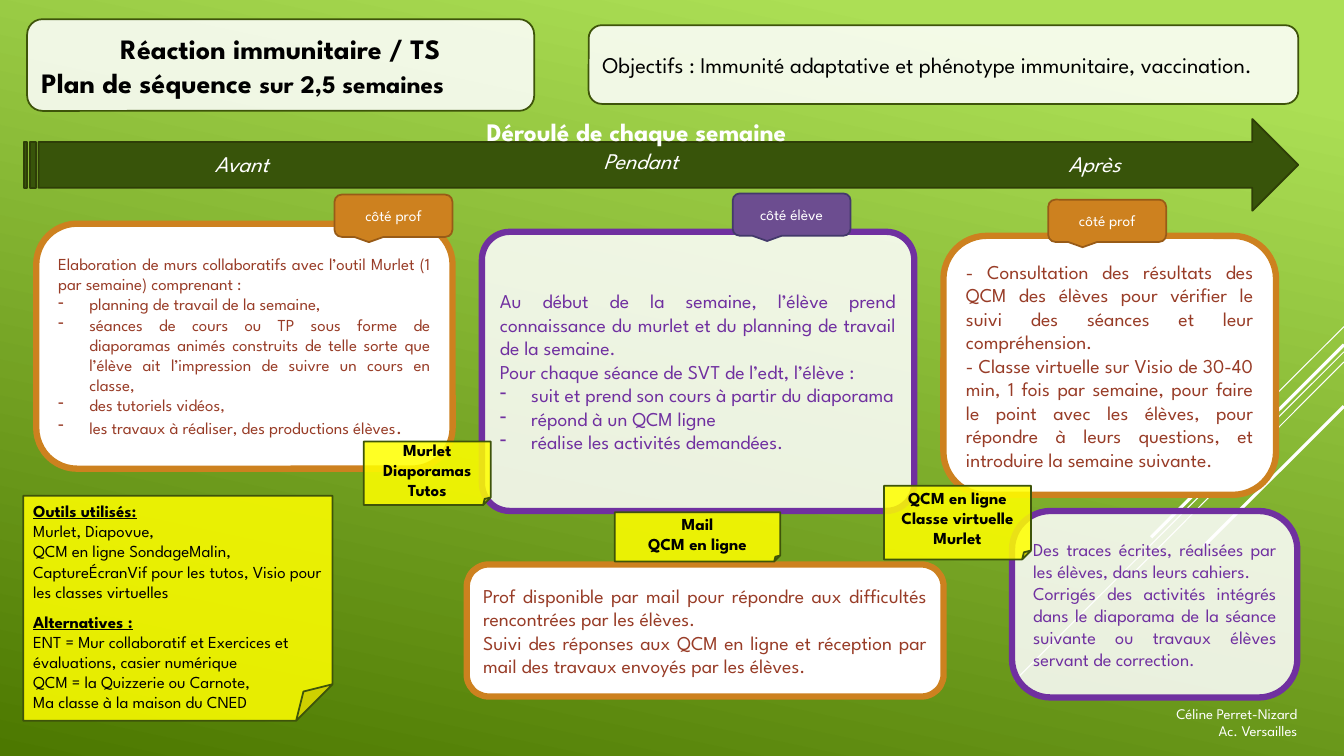
"""Build the one-slide plan of a teaching sequence on the immune response."""
import dataclasses
import typing

import lxml.etree
import pptx
import pptx.dml.color
import pptx.enum.shapes
import pptx.enum.text
import pptx.oxml.ns
import pptx.util

FONT = "League Spartan"
WHITE, BLACK, YELLOW = "FFFFFF", "000000", "FFFF00"
ORANGE, BROWN, PURPLE, GREEN = "CD811F", "983C27", "7030A0", "3E540A"
VEIL = 0.86
INDENT = 22.3
KIND = pptx.enum.shapes.MSO_SHAPE
ALIGN = pptx.enum.text.PP_ALIGN
ANCHOR = pptx.enum.text.MSO_ANCHOR


class Span(typing.NamedTuple):
    text: str
    size: typing.Optional[float] = None


class Para(typing.NamedTuple):
    spans: tuple[Span, ...]
    align: typing.Optional[ALIGN] = None
    bullet: bool = False
    heading: bool = False
    before: float = 0


@dataclasses.dataclass(frozen=True)
class Box:
    left: float
    top: float
    width: float
    height: float
    paras: tuple[Para, ...] = ()
    kind: typing.Optional[KIND] = KIND.ROUNDED_RECTANGLE
    fill: str = WHITE
    alpha: float = 1
    line: str = GREEN
    weight: float = 1.25
    adjust: typing.Optional[float] = None
    size: float = 12
    color: str = BLACK
    bold: bool = False
    italic: bool = False
    align: ALIGN = ALIGN.JUSTIFY
    anchor: ANCHOR = ANCHOR.MIDDLE
    wrap: bool = True


class Ray(typing.NamedTuple):
    start_y: float
    end_x: float
    end_y: float
    weight: float


def plain(*texts: str, **options: typing.Any) -> tuple[Para, ...]:
    return tuple(Para((Span(text),), **options) for text in texts)


def label(left: float, top: float, width: float, text: str) -> Box:
    return Box(left, top, width, 26.6, plain(text), None, size=16, color=WHITE,
               italic=True, align=ALIGN.LEFT, anchor=ANCHOR.TOP)


def sticky(left: float, top: float, width: float, height: float, *texts: str) -> Box:
    return Box(left, top, width, height, plain(*texts), KIND.FOLDED_CORNER, YELLOW,
               VEIL, adjust=0.121, bold=True, align=ALIGN.CENTER)


def callout(left: float, top: float, text: str, fill: str, line: str) -> Box:
    return Box(left, top, 84.2, 30.2, plain(text), KIND.ROUNDED_RECTANGULAR_CALLOUT,
               fill, line=line, size=11, color=WHITE, align=ALIGN.CENTER)


def teacher(left: float, top: float, width: float, height: float, size: float, *paras: Para) -> Box:
    return Box(left, top, width, height, paras, line=ORANGE, weight=4.5, size=size, color=BROWN)


def pupil(left: float, top: float, width: float, height: float, size: float,
          adjust: float, *paras: Para) -> Box:
    return Box(left, top, width, height, paras, alpha=VEIL, line=PURPLE,
               weight=4.5, adjust=adjust, size=size, color=PURPLE)


RAYS = (Ray(233.3, 887.8, 305.3, 0.75), Ray(251.3, 725, 486, 0.75), Ray(258.5, 810.7, 408.2, 0.75),
        Ray(246.2, 822.2, 383.8, 2.25), Ray(290.2, 859.7, 390.2, 2.25))

BOXES = (
    Box(17.3, 85, 910, 65.5, kind=KIND.STRIPED_RIGHT_ARROW, fill="38540A", line="2E3E07"),
    label(146.2, 103.7, 116.6, "Avant"),
    label(424, 101.5, 96.5, "Pendant"),
    label(756, 103.7, 64, "Après"),
    Box(16.6, 354.2, 221, 160.6, (
        *plain("Outils utilisés:", heading=True),
        *plain("Murlet, Diapovue,", "QCM en ligne SondageMalin, CaptureÉcranVif pour les tutos, "
               "Visio pour les classes virtuelles"),
        *plain("Alternatives :", heading=True, before=7),
        *plain("ENT = Mur collaboratif et Exercices et évaluations, casier numérique",
               "QCM = la Quizzerie ou Carnote,", "Ma classe à la maison du CNED")),
        KIND.FOLDED_CORNER, YELLOW, VEIL, adjust=0.162, align=ALIGN.LEFT, anchor=ANCHOR.TOP),
    teacher(25.9, 159.8, 297.4, 175, 12, *plain(
        "Elaboration de murs collaboratifs avec l’outil Murlet (1 par semaine) comprenant :"),
        *plain("planning de travail de la semaine,",
               "séances de cours ou TP sous forme de diaporamas animés construits de telle "
               "sorte que l’élève ait l’impression de suivre un cours en classe,",
               "des tutoriels vidéos,", bullet=True),
        Para((Span("les travaux à réaliser, des productions élèves"), Span(".", 14)), bullet=True)),
    Box(420.5, 18, 506.9, 56.2, plain(
        "Objectifs : Immunité adaptative et phénotype immunitaire, vaccination."), alpha=VEIL, size=16),
    Box(19.4, 13.7, 362.2, 65.5, (
        *plain("Réaction immunitaire / TS", align=ALIGN.CENTER),
        Para((Span("Plan de séquence "), Span("sur 2,5 semaines", 18)))),
        alpha=VEIL, size=20, bold=True, align=ALIGN.LEFT),
    pupil(344.2, 165.6, 308.9, 199.4, 14, 0.1, *plain(
        "Au début de la semaine, l’élève prend connaissance du murlet et du planning "
        "de travail de la semaine.", "Pour chaque séance de SVT de l’edt, l’élève :"),
        *plain("suit et prend son cours à partir du diaporama", "répond à un QCM ligne",
               "réalise les activités demandées.", bullet=True)),
    teacher(673.9, 168.5, 237.6, 185, 14, *plain(
        "- Consultation des résultats des QCM des élèves pour vérifier le suivi des séances "
        "et leur compréhension.",
        "- Classe virtuelle sur Visio de 30-40 min, 1 fois par semaine, pour faire le point avec "
        "les élèves, pour répondre à leurs questions, et introduire la semaine suivante.")),
    callout(239, 139, "côté prof", ORANGE, "985B17"),
    callout(523.4, 138.2, "côté élève", "6C4D90", "43396B"),
    callout(748.8, 142.6, "côté prof", ORANGE, "985B17"),
    sticky(259.9, 315.4, 90.7, 45.4, "Murlet", "Diaporamas", "Tutos"),
    teacher(333.4, 403.2, 340.6, 94.3, 14, *plain(
        "Prof disponible par mail pour répondre aux difficultés rencontrées par les élèves.",
        "Suivi des réponses aux QCM en ligne et réception par mail des travaux envoyés par les élèves.")),
    pupil(722.9, 365, 203.8, 133.2, 13, 0.207, *plain(
        "Des traces écrites, réalisées par les élèves, dans leurs cahiers.",
        "Corrigés des activités intégrés dans le diaporama de la séance suivante ou travaux "
        "élèves servant de correction.")),
    sticky(439.2, 365.8, 118.1, 35.3, "Mail", "QCM en ligne"),
    sticky(631.4, 347, 105.1, 52.6, "QCM en ligne", "Classe virtuelle", "Murlet"),
    Box(799.9, 499.7, 133.9, 32.4, plain("Céline Perret-Nizard", "Ac. Versailles"), None,
        size=10.5, color=WHITE, align=ALIGN.RIGHT, anchor=ANCHOR.TOP),
    Box(320.4, 79.2, 268.6, 28.8, plain("Déroulé de chaque semaine"), None, size=18,
        color=WHITE, bold=True, align=ALIGN.CENTER, anchor=ANCHOR.TOP, wrap=False),
)


def paint(target: typing.Any, color: str) -> None:
    target.rgb = pptx.dml.color.RGBColor.from_string(color)


def add_element(parent: typing.Any, tag: str, **attributes: str) -> None:
    lxml.etree.SubElement(parent, pptx.oxml.ns.qn(tag), **attributes)


def add_span(para: typing.Any, text: str, *, size: float, color: str, bold: bool,
             italic: bool, underline: bool) -> None:
    span = para.add_run()
    span.text = text
    font = span.font
    font.name, font.size = FONT, pptx.util.Pt(size)
    font.bold, font.italic, font.underline = bold, italic, underline
    paint(font.color, color)


def write(frame: typing.Any, box: Box) -> None:
    frame.word_wrap, frame.vertical_anchor = box.wrap, box.anchor
    for index, item in enumerate(box.paras):
        para = frame.add_paragraph() if index else frame.paragraphs[0]
        para.alignment = box.align if item.align is None else item.align
        if item.before:
            para.space_before = pptx.util.Pt(item.before)
        if item.bullet:
            properties = para._p.get_or_add_pPr()
            properties.set("marL", str(pptx.util.Pt(INDENT)))
            properties.set("indent", str(-pptx.util.Pt(INDENT)))
            add_element(properties, "a:buChar", char="-")
        for span in item.spans:
            add_span(para, span.text, size=span.size or box.size, color=box.color,
                     bold=box.bold or item.heading, italic=box.italic, underline=item.heading)


def draw_box(slide: typing.Any, box: Box) -> None:
    place = [pptx.util.Pt(length) for length in (box.left, box.top, box.width, box.height)]
    if box.kind is None:
        shape = slide.shapes.add_textbox(*place)
        shape.text_frame.auto_size = pptx.enum.text.MSO_AUTO_SIZE.SHAPE_TO_FIT_TEXT
    else:
        shape = slide.shapes.add_shape(box.kind, *place)
        shape.shadow.inherit = False
        properties = shape._element.spPr
        if box.adjust is not None:
            guides = properties.find(".//" + pptx.oxml.ns.qn("a:avLst"))
            add_element(guides, "a:gd", name="adj", fmla=f"val {round(box.adjust * 100000)}")
        shape.fill.solid()
        paint(shape.fill.fore_color, box.fill)
        if box.alpha < 1:
            color = properties.find(".//" + pptx.oxml.ns.qn("a:srgbClr"))
            add_element(color, "a:alpha", val=str(round(box.alpha * 100000)))
        paint(shape.line.color, box.line)
        shape.line.width = pptx.util.Pt(box.weight)
    write(shape.text_frame, box)


def draw_ray(slide: typing.Any, ray: Ray) -> None:
    ends = [pptx.util.Pt(length) for length in (960, ray.start_y, ray.end_x, ray.end_y)]
    line = slide.shapes.add_connector(pptx.enum.shapes.MSO_CONNECTOR.STRAIGHT, *ends)
    paint(line.line.color, WHITE)
    line.line.width = pptx.util.Pt(ray.weight)
    add_element(line._element.spPr, "a:effectLst")


deck = pptx.Presentation()
deck.slide_width, deck.slide_height = pptx.util.Pt(960), pptx.util.Pt(540)
page = deck.slides.add_slide(deck.slide_layouts[6])
backdrop = page.background.fill
backdrop.gradient()
backdrop.gradient_angle = 258
for stop, position, shade in zip(backdrop.gradient_stops, (0.1, 1), ("ACDF55", "4C7800")):
    stop.position = position
    paint(stop.color, shade)
for beam in RAYS:
    draw_ray(page, beam)
for item in BOXES:
    draw_box(page, item)
deck.save("out.pptx")
